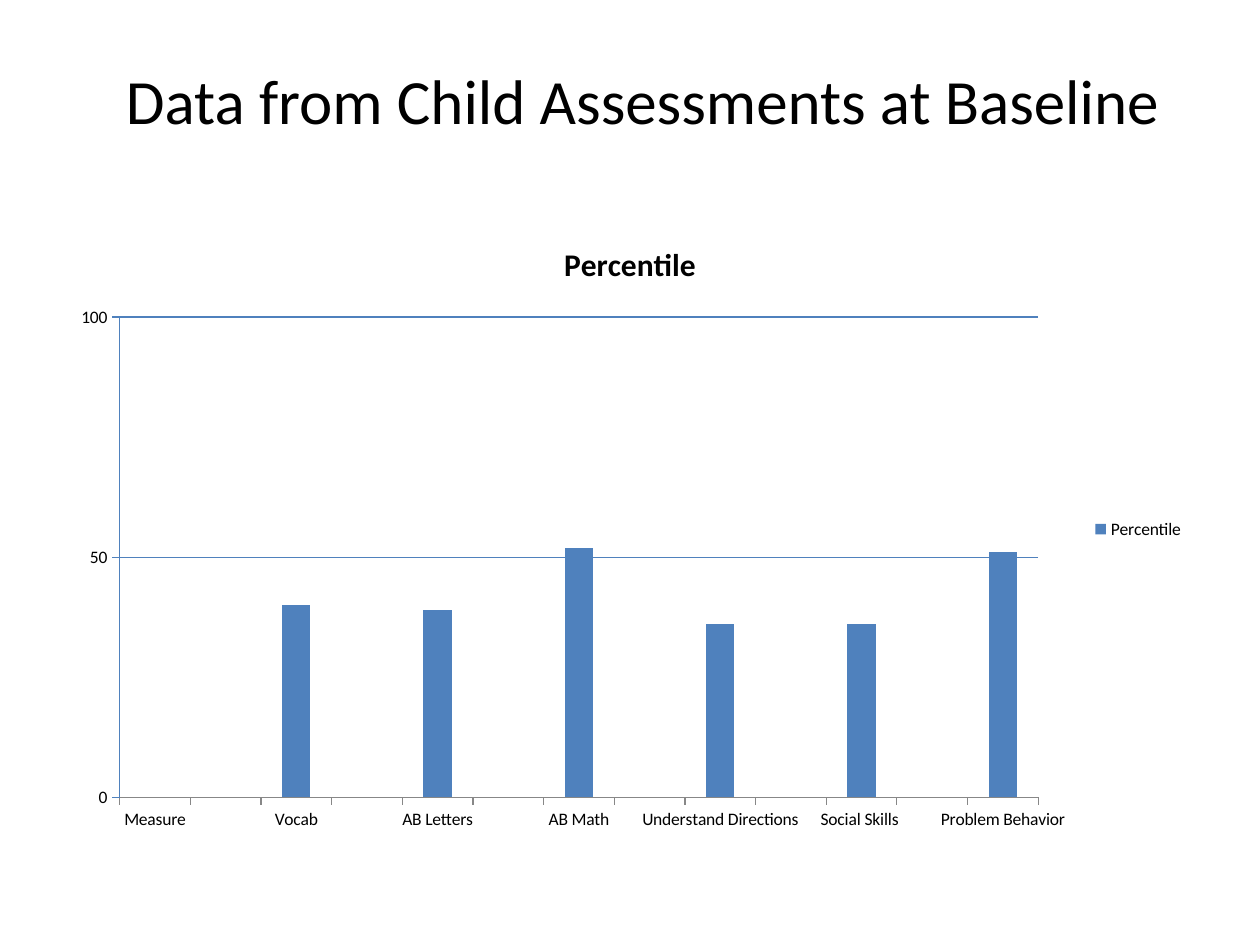
from lxml import etree
from pptx import Presentation
from pptx.chart.data import CategoryChartData
from pptx.dml.color import RGBColor
from pptx.enum.chart import XL_CHART_TYPE, XL_LEGEND_POSITION, XL_TICK_MARK
from pptx.enum.text import MSO_ANCHOR, PP_ALIGN
from pptx.oxml import parse_xml
from pptx.oxml.ns import nsdecls
from pptx.util import Inches, Pt

COLUMNS = XL_CHART_TYPE.COLUMN_CLUSTERED
RIGHT = XL_LEGEND_POSITION.RIGHT
OUTSIDE = XL_TICK_MARK.OUTSIDE
MIDDLE = MSO_ANCHOR.MIDDLE
CENTER = PP_ALIGN.CENTER

MEASURES = {"Measure": None, "Vocab": 40, "AB Letters": 39, "AB Math": 52,
            "Understand Directions": 36, "Social Skills ": 36,
            "Problem Behavior": 51}


def color(hex_value):
    return RGBColor.from_string(hex_value)


class SlideBuilder:
    """Holds the style and the current slide."""
    font_name = "Calibri"
    ink = "000000"
    accent = "4F81BD"
    axis_gray = "878787"

    def __init__(self, deck):
        self.width, self.height = deck.slide_width, deck.slide_height
        self.slide = deck.slides.add_slide(deck.slide_layouts[5])

    def area(self, left, top, width, height):
        """Turn shares of the slide's size into lengths."""
        return (int(left * self.width), int(top * self.height),
                int(width * self.width), int(height * self.height))

    def set_font(self, font, size, bold=False):
        font.name, font.size, font.bold = self.font_name, Pt(size), bold
        font.color.rgb = color(self.ink)

    def set_line(self, line, hex_value):
        line.color.rgb, line.width = color(hex_value), Pt(0.75)

    def title(self, text, shares):
        box = self.slide.shapes.title
        box.left, box.top, box.width, box.height = self.area(*shares)
        frame = box.text_frame
        frame.text = text
        frame.vertical_anchor = MIDDLE
        para = frame.paragraphs[0]
        para.alignment = CENTER
        self.set_font(para.font, 36)

    def column_chart(self, name, measures, shares, plot_shares):
        # Blank categories keep the measures apart
        data = CategoryChartData()
        values = []
        for index, (label, value) in enumerate(measures.items()):
            if index:
                data.add_category("")
                values.append(None)
            data.add_category(label)
            values.append(value)
        data.add_series(name, values)
        chart = self.slide.shapes.add_chart(
            COLUMNS, *self.area(*shares), data).chart
        self.set_font(chart.font, 10)

        # Title and legend
        chart.has_title = True
        heading = chart.chart_title.text_frame
        heading.text = name
        self.set_font(heading.paragraphs[0].font, 18, bold=True)
        chart.has_legend = True
        chart.legend.position = RIGHT
        chart.legend.include_in_layout = False

        # Columns
        plot = chart.plots[0]
        plot.gap_width = 150
        plot.vary_by_categories = False
        fill = plot.series[0].format.fill
        fill.solid()
        fill.fore_color.rgb = color(self.accent)

        # Axes
        for axis, line_color in ((chart.category_axis, self.axis_gray),
                                 (chart.value_axis, self.accent)):
            axis.major_tick_mark = OUTSIDE
            self.set_line(axis.format.line, line_color)
            self.set_font(axis.tick_labels.font, 10)
        scale = chart.value_axis
        scale.minimum_scale, scale.maximum_scale = 0, 100
        scale.major_unit = 50
        scale.has_major_gridlines = True
        self.set_line(scale.major_gridlines.format.line, self.accent)
        self.place_plot(chart, plot_shares)

    def place_plot(self, chart, plot_shares):
        plot_area = chart.plots[0]._element.getparent()
        for old in plot_area.findall("{*}layout"):
            plot_area.remove(old)
        layout = parse_xml(f"<c:layout {nsdecls('c')}><c:manualLayout/></c:layout>")
        settings = {"layoutTarget": "inner", "xMode": "edge", "yMode": "edge",
                    **dict(zip("xywh", plot_shares))}
        for tag, value in settings.items():
            item = etree.SubElement(layout[0], layout.tag.replace("layout", tag))
            item.set("val", str(value))
        plot_area.insert(0, layout)


def main():
    deck = Presentation()
    deck.slide_width, deck.slide_height = Inches(10), Inches(7.5)
    builder = SlideBuilder(deck)
    builder.title("Data from Child Assessments at Baseline",
                  (0.06, 0.02, 0.9, 0.17))
    builder.column_chart("Percentile", MEASURES, (0.05, 0.23, 0.9, 0.66),
                         (0.05, 0.16, 0.81, 0.77))
    deck.save("out.pptx")


if __name__ == "__main__":
    main()
